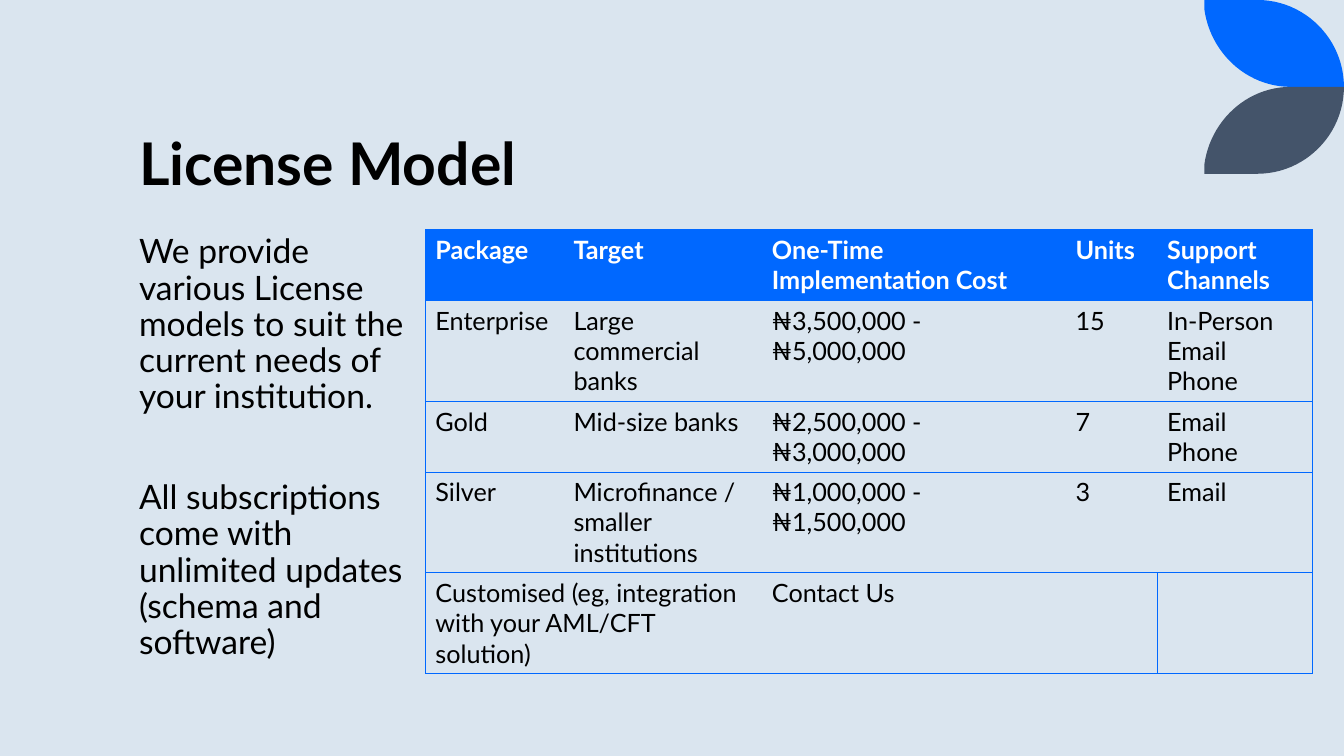
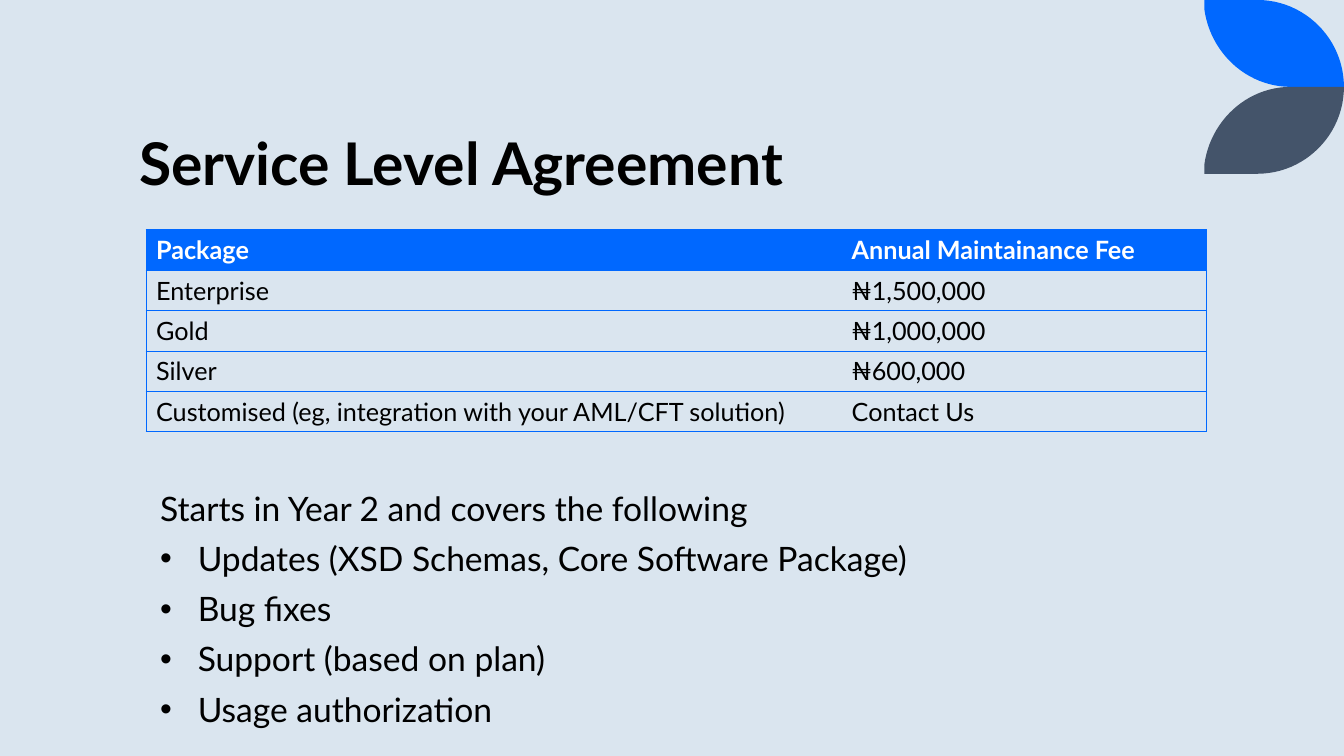
"""Build two slides on licensing packages and the service level agreement."""
from lxml import etree
from pptx import Presentation
from pptx import util as u
from pptx.dml.color import RGBColor
from pptx.enum import text
from pptx.oxml.ns import qn

FONT = "Lato"
BLUE, SLATE, PALE, BLACK, WHITE = "0068FF", "44546A", "DAE5EF", "000000", "FFFFFF"
SLIDE_W, SLIDE_H = 33.87, 19.05
TITLE_BOX = (3.25, 1.27, 26.92, 3.81)
TABLE_TOP = 5.79
LEAF_W, LEAF_H = 3.52, 2.19
LEAF_CURVES = [
    [(0.38, 0), (0.72, 0), (1, 0.45), (1, 1)],
    [(0.62, 1), (0.3, 1), (0.04, 0.6), (0, 0.1)],
]
CUSTOM = "Customised (eg, integration with your AML/CFT solution)"

SLIDES = [
    {
        "title": "License Model",
        "body_box": (3.25, 5.79, 7.49, 10.8),
        "body": [
            ("We provide various License models to suit the current needs of your institution.", False, 0),
            ("All subscriptions come with unlimited updates (schema and software)", False, 46),
        ],
        "table_left": 10.72,
        "widths": [3.48, 5, 7.65, 2.31, 3.91],
        "rows": [
            (2, ["Package", "Target", "One-Time Implementation Cost", "Units", "Support Channels"]),
            (3, ["Enterprise", "Large commercial banks", "₦3,500,000 - ₦5,000,000", "15",
                 "In-Person\nEmail\nPhone"]),
            (2, ["Gold", "Mid-size banks", "₦2,500,000 - ₦3,000,000", "7", "Email\nPhone"]),
            (3, ["Silver", "Microfinance / smaller institutions", "₦1,000,000 - ₦1,500,000", "3", "Email"]),
            (3, [CUSTOM, "", "Contact Us", "", ""]),
        ],
        "merge": [((4, 0), (4, 1))],
        "dividers": [(4, 4)],
    },
    {
        "title": "Service Level Agreement",
        "body_box": (3.78, 12.27, 26.62, 6.3),
        "body": [
            ("Starts in Year 2 and covers the following", False, 0),
            ("Updates (XSD Schemas, Core Software Package)", True, 10),
            ("Bug fixes", True, 10),
            ("Support (based on plan)", True, 10),
            ("Usage authorization", True, 10),
        ],
        "table_left": 3.68,
        "widths": [17.53, 9.19],
        "rows": [
            (1, ["Package", "Annual Maintainance Fee"]),
            (1, ["Enterprise", "₦1,500,000"]),
            (1, ["Gold", "₦1,000,000"]),
            (1, ["Silver", "₦600,000"]),
            (1, [CUSTOM, "Contact Us"]),
        ],
        "merge": [],
        "dividers": [],
    },
]


def rgb(value):
    return RGBColor.from_string(value)


def style(p, size, colour=BLACK, bold=False):
    f = p.font
    f.name, f.size, f.bold = FONT, u.Pt(size), bold
    f.color.rgb = rgb(colour)


def place(sp, box):
    sp.left, sp.top, sp.width, sp.height = (u.Cm(v) for v in box)


def bezier(ends, steps=24):
    a, b, c, d = ends
    for i in range(steps + 1):
        t = i / steps
        q = 1 - t
        yield tuple(q**3 * a[k] + 3 * q * q * t * b[k] + 3 * q * t * t * c[k] + t**3 * d[k]
                    for k in (0, 1))


def add_leaf(s, colour, flipped):
    outline = [(0, 0)] + [pt for curve in LEAF_CURVES for pt in bezier(curve)]
    points = [(u.Cm(SLIDE_W - LEAF_W + x * LEAF_W), u.Cm((2 - y if flipped else y) * LEAF_H))
              for x, y in outline]
    builder = s.shapes.build_freeform(*points[0])
    builder.add_line_segments(points[1:], close=True)
    sp = builder.convert_to_shape()
    sp.shadow.inherit = False
    sp.fill.solid()
    sp.fill.fore_color.rgb = rgb(colour)
    sp.line.fill.background()


def add_title(s, title):
    sp = s.shapes.title
    place(sp, TITLE_BOX)
    tf = sp.text_frame
    tf.text = title
    tf.auto_size = text.MSO_AUTO_SIZE.NONE
    tf.vertical_anchor = text.MSO_ANCHOR.BOTTOM
    p = tf.paragraphs[0]
    p.alignment, p.line_spacing = text.PP_ALIGN.LEFT, 0.8
    style(p, 42, bold=True)


def add_body(s, box, items):
    sp = s.placeholders[1]
    place(sp, box)
    tf = sp.text_frame
    tf.text = "\n".join(item[0] for item in items)
    tf.auto_size = text.MSO_AUTO_SIZE.NONE
    for p, (_, bulleted, before) in zip(tf.paragraphs, items):
        p.line_spacing, p.space_before = 0.9, u.Pt(before)
        pr = p._p.get_or_add_pPr()
        indent = u.Cm(0.95) if bulleted else 0
        pr.set("marL", str(indent))
        pr.set("indent", str(-indent))
        if bulleted:
            etree.SubElement(pr, qn("a:buFont"), typeface="Arial")
            etree.SubElement(pr, qn("a:buChar"), char="•")
        else:
            etree.SubElement(pr, qn("a:buNone"))
        style(p, 24)


def set_borders(cell, sides):
    pr = cell._tc.get_or_add_tcPr()
    for i, side in enumerate("LRTB"):
        ln = etree.Element(qn("a:ln" + side), w=str(u.Pt(0.5)))
        if side in sides:
            fill = etree.SubElement(ln, qn("a:solidFill"))
            etree.SubElement(fill, qn("a:srgbClr"), val=BLUE)
        else:
            etree.SubElement(ln, qn("a:noFill"))
        pr.insert(i, ln)


def add_table(s, data):
    rows, widths, dividers = data["rows"], data["widths"], data["dividers"]
    heights = [0.25 + 0.76 * lines for lines, _ in rows]
    box = (data["table_left"], TABLE_TOP, sum(widths), sum(heights))
    table = s.shapes.add_table(len(rows), len(widths), *(u.Cm(v) for v in box)).table
    table.horz_banding = False
    for column, width in zip(table.columns, widths):
        column.width = u.Cm(width)
    for r, (_, values) in enumerate(rows):
        table.rows[r].height = u.Cm(heights[r])
        for c, value in enumerate(values):
            cell = table.cell(r, c)
            cell.text = value
            if r == 0:
                cell.fill.solid()
                cell.fill.fore_color.rgb = rgb(BLUE)
            else:
                cell.fill.background()
            for p in cell.text_frame.paragraphs:
                style(p, 18, WHITE if r == 0 else BLACK, r == 0)
            left = c == 0 or (r, c) in dividers
            right = c == len(widths) - 1 or (r, c + 1) in dividers
            set_borders(cell, "TB" + "L" * left + "R" * right)
    for start, end in data["merge"]:
        table.cell(*start).merge(table.cell(*end))


def main():
    prs = Presentation()
    prs.slide_width, prs.slide_height = u.Cm(SLIDE_W), u.Cm(SLIDE_H)
    background = prs.slide_master.background.fill
    background.solid()
    background.fore_color.rgb = rgb(PALE)
    for data in SLIDES:
        s = prs.slides.add_slide(prs.slide_layouts[1])
        add_leaf(s, BLUE, False)
        add_leaf(s, SLATE, True)
        add_title(s, data["title"])
        add_body(s, data["body_box"], data["body"])
        add_table(s, data)
    prs.save("out.pptx")


if __name__ == "__main__":
    main()
